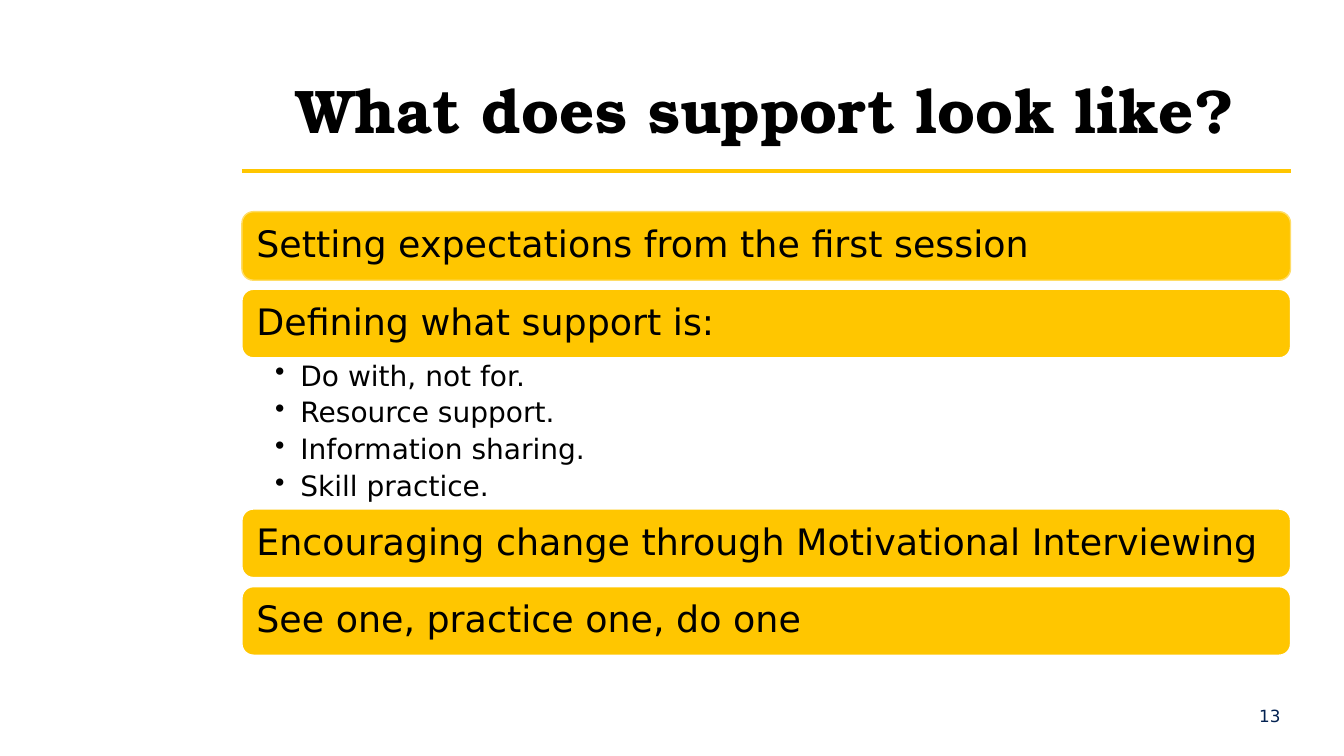
import dataclasses

import lxml.etree
import pptx
import pptx.dml.color
import pptx.enum.shapes
import pptx.enum.text
import pptx.oxml.ns
import pptx.util

Inches = pptx.util.Inches
Align = pptx.enum.text.PP_ALIGN
Anchor = pptx.enum.text.MSO_ANCHOR


@dataclasses.dataclass(frozen=True)
class Theme:
    gold: str = "FFC600"
    pale_gold: str = "FFDD66"
    white: str = "FFFFFF"
    black: str = "000000"
    navy: str = "022151"
    title_font: str = "TeX Gyre Bonum"
    body_font: str = "DejaVu Sans"
    title_size: float = 44
    bar_size: float = 26
    bullet_size: float = 20
    number_size: float = 12


@dataclasses.dataclass(frozen=True)
class Topic:
    heading: str
    outline: str
    points: tuple[str, ...] = ()


THEME = Theme()
LEFT, WIDTH = 2.4, 10.4
TOPICS_TOP, BAR_HEIGHT, BAR_GAP, POINTS_HEIGHT = 2.1, 0.68, 0.09, 1.5
TOPICS = (
    Topic("Setting expectations from the first session", THEME.pale_gold),
    Topic(
        "Defining what support is:",
        THEME.white,
        ("Do with, not for.", "Resource support.", "Information sharing.", "Skill practice."),
    ),
    Topic("Encouraging change through Motivational Interviewing", THEME.white),
    Topic("See one, practice one, do one", THEME.white),
)


def color(value: str) -> pptx.dml.color.RGBColor:
    return pptx.dml.color.RGBColor.from_string(value)


def add_run(paragraph, text: str, size: float, ink: str = THEME.black,
            font: str = THEME.body_font, bold: bool = False) -> None:
    run = paragraph.add_run()
    run.text = text
    run.font.name = font
    run.font.size = pptx.util.Pt(size)
    run.font.bold = bold
    run.font.color.rgb = color(ink)


def set_frame(frame, anchor, horizontal: float = 0.1, vertical: float = 0.05) -> None:
    frame.word_wrap = True
    frame.auto_size = pptx.enum.text.MSO_AUTO_SIZE.NONE
    frame.vertical_anchor = anchor
    frame.margin_left = frame.margin_right = Inches(horizontal)
    frame.margin_top = frame.margin_bottom = Inches(vertical)


def add_title(slide, text: str) -> None:
    title = slide.shapes.title
    title.left, title.top = Inches(LEFT), Inches(0.3)
    title.width, title.height = Inches(WIDTH), Inches(1.2)
    set_frame(title.text_frame, Anchor.BOTTOM)
    paragraph = title.text_frame.paragraphs[0]
    paragraph.alignment = Align.CENTER
    add_run(paragraph, text, THEME.title_size, font=THEME.title_font, bold=True)


def add_rule(slide) -> None:
    rule = slide.shapes.add_connector(
        pptx.enum.shapes.MSO_CONNECTOR.STRAIGHT,
        Inches(LEFT), Inches(1.7), Inches(LEFT + WIDTH), Inches(1.7),
    )
    rule.line.color.rgb = color(THEME.gold)
    rule.line.width = pptx.util.Pt(3)
    lxml.etree.SubElement(rule._element.spPr, pptx.oxml.ns.qn("a:effectLst"))


def add_bar(slide, topic: Topic, top: float) -> None:
    bar = slide.shapes.add_shape(
        pptx.enum.shapes.MSO_SHAPE.ROUNDED_RECTANGLE,
        Inches(LEFT), Inches(top), Inches(WIDTH), Inches(BAR_HEIGHT),
    )
    bar.shadow.inherit = False
    bar.fill.solid()
    bar.fill.fore_color.rgb = color(THEME.gold)
    bar.line.color.rgb = color(topic.outline)
    bar.line.width = pptx.util.Pt(1)
    set_frame(bar.text_frame, Anchor.MIDDLE, 0.11, 0.11)
    paragraph = bar.text_frame.paragraphs[0]
    paragraph.alignment = Align.LEFT
    paragraph.line_spacing = 0.9
    add_run(paragraph, topic.heading, THEME.bar_size)


def add_points(slide, points: tuple[str, ...], top: float) -> None:
    box = slide.shapes.add_textbox(
        Inches(LEFT), Inches(top), Inches(WIDTH), Inches(POINTS_HEIGHT)
    )
    frame = box.text_frame
    set_frame(frame, Anchor.TOP, 0.2, 0.04)
    frame.margin_left = Inches(0.33)
    for index, point in enumerate(points):
        paragraph = frame.add_paragraph() if index else frame.paragraphs[0]
        properties = paragraph._p.get_or_add_pPr()
        properties.set("marL", str(Inches(0.25)))
        properties.set("indent", str(-Inches(0.25)))
        bullet = lxml.etree.SubElement(properties, pptx.oxml.ns.qn("a:buChar"))
        bullet.set("char", "•")
        paragraph.line_spacing = 0.9
        paragraph.space_after = pptx.util.Pt(4.7)
        add_run(paragraph, point, THEME.bullet_size)


def add_topics(slide) -> None:
    top = TOPICS_TOP
    for topic in TOPICS:
        add_bar(slide, topic, top)
        top += BAR_HEIGHT
        if topic.points:
            add_points(slide, topic.points, top)
            top += POINTS_HEIGHT
        else:
            top += BAR_GAP


def add_slide_number(slide, number: int) -> None:
    box = slide.shapes.add_textbox(Inches(11.8), Inches(6.9), Inches(1), Inches(0.4))
    set_frame(box.text_frame, Anchor.MIDDLE)
    paragraph = box.text_frame.paragraphs[0]
    paragraph.alignment = Align.RIGHT
    add_run(paragraph, str(number), THEME.number_size, THEME.navy)


def main() -> None:
    presentation = pptx.Presentation()
    presentation.slide_width = Inches(13.33)
    presentation.slide_height = Inches(7.5)
    slide = presentation.slides.add_slide(presentation.slide_layouts[5])
    slide.background.fill.solid()
    slide.background.fill.fore_color.rgb = color(THEME.white)
    add_rule(slide)
    add_title(slide, "What does support look like?")
    add_topics(slide)
    add_slide_number(slide, 13)
    presentation.save("out.pptx")


if __name__ == "__main__":
    main()
